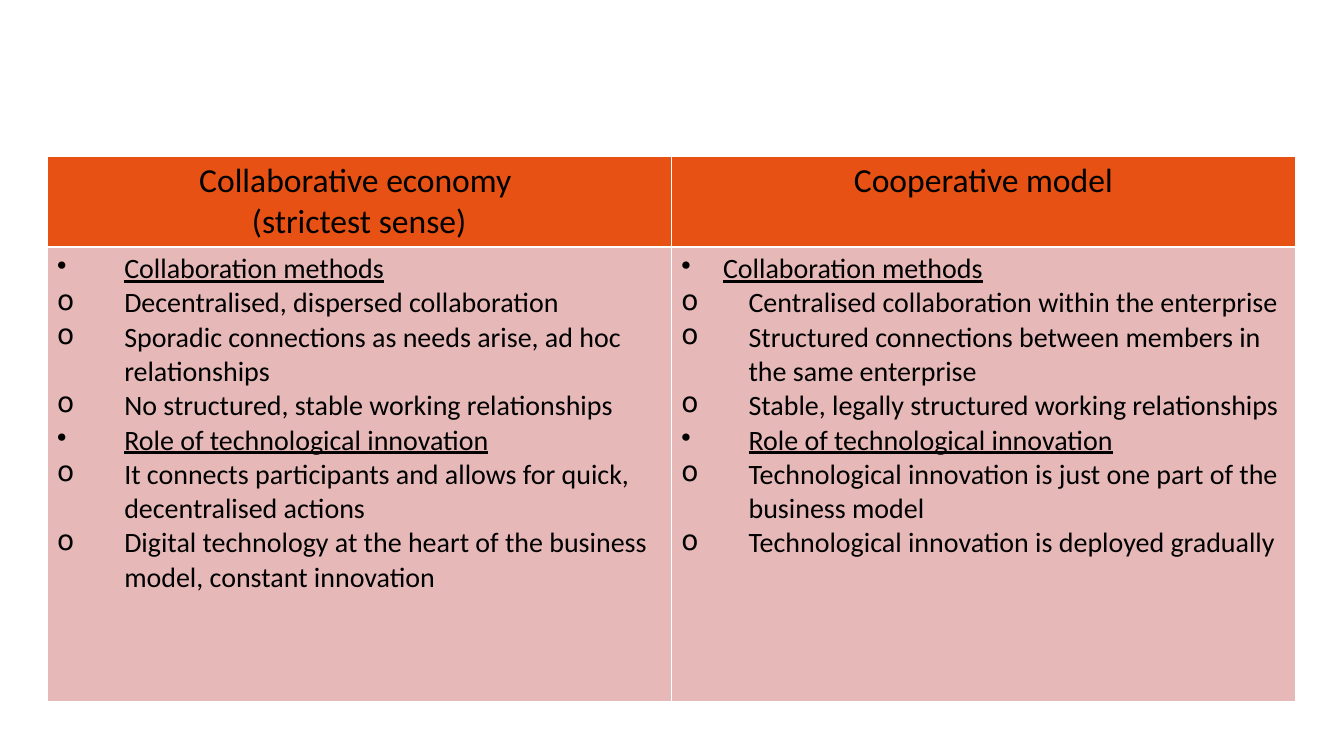
import pptx
import pptx.dml.color
import pptx.enum.text
import pptx.oxml.ns
import pptx.util
from lxml import etree

BLACK, WHITE, ORANGE, PINK = "000000", "FFFFFF", "E75113", "E6B9B8"
PX = 4572
BULLET, CIRCLE = "•", "o"
METHODS = "Collaboration methods"
ROLE = "Role of technological innovation"

HEADERS = ["Collaborative economy \v(strictest sense)", "Cooperative model"]
COLUMNS = [
    [
        (METHODS, " ", 100, [
            "Decentralised, dispersed collaboration",
            "Sporadic connections as needs arise, ad hoc relationships",
            "No structured, stable working relationships",
        ]),
        (ROLE, "", 100, [
            "It connects participants and allows for quick, decentralised actions",
            "Digital technology at the heart of the business model, constant innovation",
        ]),
    ],
    [
        (METHODS, " ", 62, [
            "Centralised collaboration within the enterprise",
            "Structured connections between members in the same enterprise",
            "Stable, legally structured working relationships",
        ]),
        (ROLE, "", 100, [
            "Technological innovation is just one part of the business model",
            "Technological innovation is deployed gradually",
        ]),
    ],
]


def px(n):
    return pptx.util.Emu(n * PX)


def rgb(value):
    return pptx.dml.color.RGBColor.from_string(value)


class Deck:
    font = {"name": "Calibri", "bold": False}

    def __init__(self, width, height):
        self.prs = pptx.Presentation()
        self.prs.slide_width, self.prs.slide_height = px(width), px(height)
        self.s = self.prs.slides.add_slide(self.prs.slide_layouts[6])

    def table(self, x, y, widths, heights):
        shape = self.s.shapes.add_table(
            len(heights), len(widths), px(x), px(y), px(sum(widths)), px(sum(heights)))
        table = shape.table
        for column, width in zip(table.columns, widths):
            column.width = px(width)
        for row, height in zip(table.rows, heights):
            row.height = px(height)
        return table

    def cell(self, cell, fill):
        margins = {"margin_left": 15, "margin_right": 15, "margin_top": 7, "margin_bottom": 7}
        for name, value in margins.items():
            setattr(cell, name, px(value))
        tc_pr = cell._tc.get_or_add_tcPr()
        for side in "LRTB":
            ln = etree.SubElement(tc_pr, pptx.oxml.ns.qn(f"a:ln{side}"), w=str(pptx.util.Pt(1)))
            solid = etree.SubElement(ln, pptx.oxml.ns.qn("a:solidFill"))
            etree.SubElement(solid, pptx.oxml.ns.qn("a:srgbClr"), val=WHITE)
        cell.fill.solid()
        cell.fill.fore_color.rgb = rgb(fill)

    def style(self, r, size, underline=False):
        values = {**self.font, "size": pptx.util.Pt(size), "underline": underline}
        for name, value in values.items():
            setattr(r.font, name, value)
        r.font.color.rgb = rgb(BLACK)

    def bullet(self, p, char, indent):
        p_pr = p._p.get_or_add_pPr()
        p_pr.set("marL", str(px(indent)))
        p_pr.set("indent", str(px(-indent)))
        etree.SubElement(p_pr, pptx.oxml.ns.qn("a:buChar"), char=char)

    def header(self, cell, text):
        self.cell(cell, ORANGE)
        p = cell.text_frame.paragraphs[0]
        p.alignment = pptx.enum.text.PP_ALIGN.CENTER
        p.text = text
        for r in p.runs:
            self.style(r, 18)

    def body(self, cell, sections):
        self.cell(cell, PINK)
        lines = []
        for heading, tail, indent, items in sections:
            lines.append((heading, tail, BULLET, indent))
            lines += [(item, "", CIRCLE, 100) for item in items]
        tf = cell.text_frame
        for i, (text, tail, char, indent) in enumerate(lines):
            p = tf.add_paragraph() if i else tf.paragraphs[0]
            self.bullet(p, char, indent)
            for part, underline in ((text, char == BULLET), (tail, False)):
                if part:
                    r = p.add_run()
                    r.text = part
                    self.style(r, 15, underline)
            etree.SubElement(p._p, pptx.oxml.ns.qn("a:endParaRPr"), sz="1500")


def main():
    deck = Deck(2000, 1125)
    table = deck.table(70, 232, [929, 929], [136, 676])
    for i, (header, sections) in enumerate(zip(HEADERS, COLUMNS)):
        deck.header(table.cell(0, i), header)
        deck.body(table.cell(1, i), sections)
    deck.prs.save("out.pptx")


if __name__ == "__main__":
    main()
